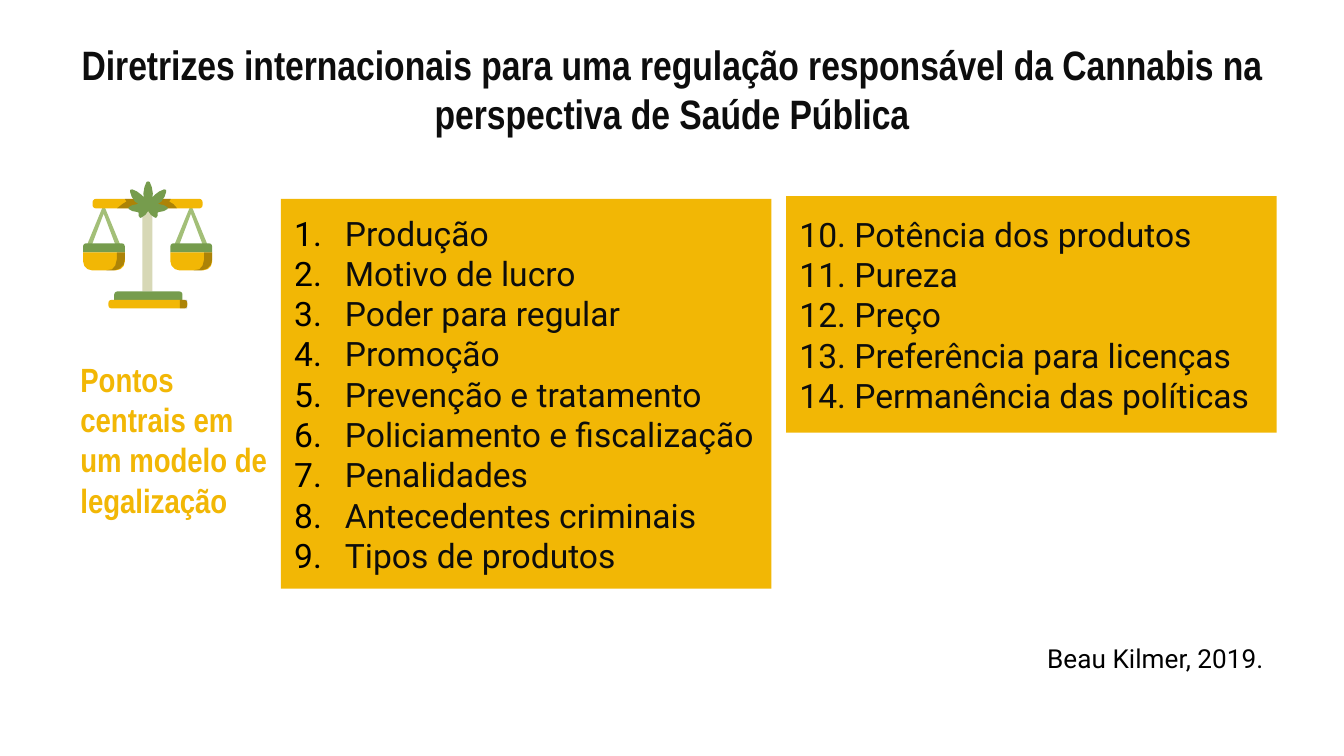
from lxml.etree import SubElement
from pptx import Presentation
from pptx.dml.color import RGBColor
from pptx.enum.shapes import MSO_SHAPE
from pptx.enum.text import MSO_ANCHOR, MSO_AUTO_SIZE, PP_ALIGN
from pptx.oxml.ns import qn
from pptx.util import Cm, Pt

COLORS = {
    "gold": "F2B705", "ink": "0D0D0D", "black": "000000",
    "green": "769C4D", "light_green": "A3BF78", "stone": "D7D8B6",
}


def paint(shape, color, alpha=None):
    """Flat fill without line or shadow; alpha is a percentage."""
    shape.shadow.inherit = False
    shape.fill.solid()
    shape.fill.fore_color.rgb = RGBColor.from_string(COLORS[color])
    shape.line.fill.background()
    if alpha:
        color_element = shape.fill._xPr.find(qn("a:solidFill"))[0]
        SubElement(color_element, qn("a:alpha")).set("val", str(alpha * 1000))


def write(shape, lines, font_name, size, color, bold=False,
          align=PP_ALIGN.LEFT, anchor=MSO_ANCHOR.MIDDLE, inset=0.25):
    """Fill the text frame, one paragraph per line."""
    frame = shape.text_frame
    frame.word_wrap = True
    frame.auto_size = MSO_AUTO_SIZE.NONE
    frame.vertical_anchor = anchor
    frame.margin_left = frame.margin_right = Cm(0.25)
    frame.margin_top = frame.margin_bottom = Cm(inset)
    for index, line in enumerate(lines):
        paragraph = frame.add_paragraph() if index else frame.paragraphs[0]
        paragraph.alignment = align
        run = paragraph.add_run()
        run.text = line
        run.font.name = font_name
        run.font.size = Pt(size)
        run.font.bold = bold
        run.font.color.rgb = RGBColor.from_string(COLORS[color])


presentation = Presentation()
presentation.slide_width = Cm(25.4)
presentation.slide_height = Cm(14.29)
slide = presentation.slides.add_slide(presentation.slide_layouts[5])

# Title
title = slide.shapes.title
title.left, title.top, title.width, title.height = Cm(1.27), Cm(1.47), Cm(22.86), Cm(1.32)
write(title, ["Diretrizes internacionais para uma regulação responsável da "
              "Cannabis na perspectiva de Saúde Pública"],
      "Arial Narrow", 22, "ink", bold=True, align=PP_ALIGN.CENTER,
      anchor=MSO_ANCHOR.BOTTOM, inset=0.18)

# The two panels of points
first_points = [
    "Produção", "Motivo de lucro", "Poder para regular", "Promoção",
    "Prevenção e tratamento", "Policiamento e fiscalização", "Penalidades",
    "Antecedentes criminais", "Tipos de produtos",
]
last_points = [
    "10. Potência dos produtos", "11. Pureza", "12. Preço",
    "13. Preferência para licenças", "14. Permanência das políticas",
]
panels = []
for left, top, height, points in [(5.31, 3.76, 7.37, first_points),
                                  (14.86, 3.71, 4.47, last_points)]:
    panel = slide.shapes.add_shape(MSO_SHAPE.RECTANGLE, Cm(left), Cm(top), Cm(9.27), Cm(height))
    paint(panel, "gold")
    write(panel, points, "Roboto", 18, "ink", align=PP_ALIGN.JUSTIFY)
    panels.append(panel)

# Automatic numbers in the first panel
for paragraph in panels[0].text_frame.paragraphs:
    properties = paragraph._p.get_or_add_pPr()
    properties.set("marL", str(Cm(0.96)))
    properties.set("indent", str(-Cm(0.96)))
    bullet_color = SubElement(properties, qn("a:buClr"))
    SubElement(bullet_color, qn("a:srgbClr")).set("val", COLORS["black"])
    SubElement(properties, qn("a:buFont")).set("typeface", "Roboto")
    SubElement(properties, qn("a:buAutoNum")).set("type", "arabicPeriod")

# Scales icon: outlines in hundredths of a centimetre
PAN_GAP = 165
hanger = [(196, 391), (193, 394), (165, 462), (168, 467), (173, 465), (196, 404),
          (219, 465), (224, 467), (227, 462), (199, 394)]
beam_shade = [(236, 376), (239, 381), (231, 386), (221, 394),
              (335, 394), (328, 386), (320, 381), (323, 376)]
bowl_shade = [(221, 477), (221, 490), (218, 502), (212, 509), (201, 511),
              (216, 511), (226, 508), (234, 500), (236, 490), (236, 477)]
half_leaf = [(0, 343), (3, 344), (7, 354), (9, 366), (8, 373), (13, 368), (21, 362),
             (30, 358), (34, 359), (34, 363), (31, 372), (25, 381), (18, 386),
             (21, 386), (30, 388), (37, 392), (37, 395), (30, 399), (20, 401),
             (18, 402), (18, 408), (15, 412), (12, 411), (5, 406), (0, 399)]
leaf = ([(280 + x, y) for x, y in half_leaf]
        + [(280 - x, y) for x, y in half_leaf[-2:0:-1]])


def shift(points, offset):
    return [(x + offset, y) for x, y in points]


# Each part: preset or outline, box in cm or points, colour, alpha, rotation
ROUND, TOP_ROUND = MSO_SHAPE.ROUNDED_RECTANGLE, MSO_SHAPE.ROUND_2_SAME_RECTANGLE
parts = [
    (None, shift(hanger, PAN_GAP), "light_green", None, 0),
    (None, hanger, "light_green", None, 0),
    (ROUND, (1.75, 3.76, 2.08, 0.18), "gold", None, 0),
    (None, beam_shade, "ink", 30, 0),
    (MSO_SHAPE.RECTANGLE, (2.69, 3.94, 0.19, 1.57), "stone", None, 0),
    (None, leaf, "green", None, 0),
    (TOP_ROUND, (2.16, 5.51, 1.29, 0.16), "green", None, 0),
    (ROUND, (2.05, 5.67, 1.49, 0.16), "gold", None, 0),
    (MSO_SHAPE.RECTANGLE, (3.4, 5.67, 0.14, 0.16), "ink", 30, 0),
]
for offset in (PAN_GAP, 0):
    left = 1.57 + offset / 100
    parts += [
        (TOP_ROUND, (left, 4.6, 0.79, 0.17), "green", None, 0),
        (TOP_ROUND, (left, 4.77, 0.79, 0.34), "gold", None, 180),
        (None, shift(bowl_shade, offset), "ink", 30, 0),
    ]

scales = slide.shapes.add_group_shape()
for preset, geometry, color, alpha, rotation in parts:
    if preset is None:
        builder = scales.shapes.build_freeform(*geometry[0], scale=Cm(0.01))
        builder.add_line_segments(geometry[1:], close=True)
        shape = builder.convert_to_shape()
    else:
        shape = scales.shapes.add_shape(preset, *[Cm(length) for length in geometry])
        if preset != MSO_SHAPE.RECTANGLE:
            shape.adjustments[0] = 0.5 if rotation else 0.35
        shape.rotation = rotation
    paint(shape, color, alpha)

# Credit and caption
credit = slide.shapes.add_textbox(Cm(12.78), Cm(12.01), Cm(11.35), Cm(0.86))
write(credit, ["Beau Kilmer, 2019."], "Roboto", 14, "black",
      align=PP_ALIGN.RIGHT, anchor=MSO_ANCHOR.TOP, inset=0.13)
caption = slide.shapes.add_textbox(Cm(1.27), Cm(7.29), Cm(4.04), Cm(2.03))
write(caption, ["Pontos centrais em um modelo de legalização"],
      "Arial Narrow", 18, "gold", bold=True)

presentation.save("out.pptx")
